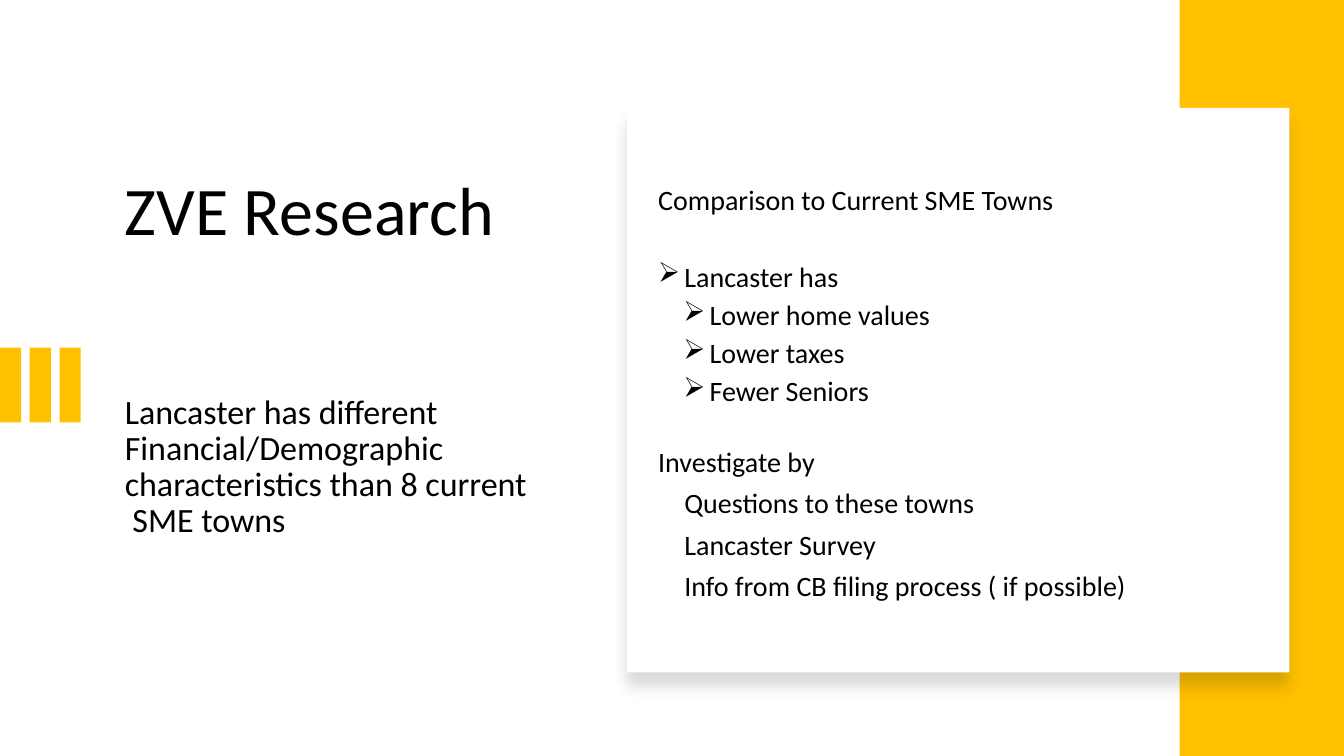
import pptx
import pptx.dml.color
import pptx.enum.text
import pptx.oxml
import pptx.oxml.ns
import pptx.util
from lxml import etree

Inches = pptx.util.Inches
Pt = pptx.util.Pt
GOLD, WHITE, BLACK = "FFC000", "FFFFFF", "000000"


def color(code):
    return pptx.dml.color.RGBColor.from_string(code)


def add(parent, tag, **attrs):
    node = etree.SubElement(parent, pptx.oxml.ns.qn(tag))
    for key, value in attrs.items():
        node.set(key, str(value))
    return node


def write(para, text, size=20, after=5.6, lines=0.9, left=0, bullet=None):
    """Fill a paragraph; left is the text indent in inches."""
    para.text = text
    para.line_spacing = lines
    para.space_after = Pt(after)
    para.font.size = Pt(size)
    para.font.name = "Calibri"
    para.font.color.rgb = color(BLACK)
    props = para._p.get_or_add_pPr()
    props.set("marL", str(Inches(left)))
    if bullet:
        props.set("indent", str(-Inches(0.26)))
        mark = pptx.oxml.parse_xml(
            f'<a:buChar {pptx.oxml.ns.nsdecls("a")} char="{bullet}"/>')
        props.find(pptx.oxml.ns.qn("a:defRPr")).addprevious(mark)


class Deck:
    def __init__(self):
        self.file = pptx.Presentation()
        self.file.slide_width = Inches(13.33)
        self.file.slide_height = Inches(7.5)
        self.slide = self.file.slides.add_slide(self.file.slide_layouts[6])

    def rect(self, x, y, w, h, fill):
        box = self.slide.shapes.add_shape(
            pptx.enum.shapes.MSO_SHAPE.RECTANGLE,
            Inches(x), Inches(y), Inches(w), Inches(h))
        box.shadow.inherit = False
        box.fill.solid()
        box.fill.fore_color.rgb = color(fill)
        box.line.fill.background()
        return box

    def card(self, x, y, w, h):
        """White panel with a soft shadow below it."""
        box = self.rect(x, y, w, h, WHITE)
        effects = box._element.spPr.find(pptx.oxml.ns.qn("a:effectLst"))
        shade = add(effects, "a:outerShdw", blurRad=Pt(11), dist=Pt(10),
                    dir=90 * 60000, algn="t", rotWithShape=0)
        tint = add(shade, "a:srgbClr", val=BLACK)
        add(tint, "a:alpha", val=15000)

    def text(self, x, y, w, h, rows):
        """Place a text box; each row is (text, format)."""
        box = self.slide.shapes.add_textbox(
            Inches(x), Inches(y), Inches(w), Inches(h))
        frame = box.text_frame
        frame.word_wrap = True
        frame.vertical_anchor = pptx.enum.text.MSO_ANCHOR.TOP
        for i, (text, style) in enumerate(rows):
            para = frame.add_paragraph() if i else frame.paragraphs[0]
            write(para, text, **style)


def main():
    deck = Deck()
    for i in range(3):
        deck.rect(i * 0.295, 3.45, 0.21, 0.74, GOLD)
    deck.rect(11.7, 0, 1.63, 7.5, GOLD)
    deck.card(6.22, 1.07, 6.57, 5.6)

    deck.text(1.14, 1.72, 4.26, 4.4, [
        ("ZVE Research", dict(size=48.6, lines=0.88, after=104)),
        ("Lancaster has different Financial/Demographic "
         "characteristics than 8 current\v SME towns",
         dict(size=24.3, lines=0.88, after=0)),
    ])

    top = dict(left=0.26, bullet="➢")
    sub = dict(left=0.51, bullet="➢")
    step = dict(left=0.26, lines=1.0)
    deck.text(6.43, 1.8, 6.06, 4.4, [
        ("Comparison to Current SME Towns", dict(after=33)),
        ("Lancaster has", top),
        ("Lower home values", sub),
        ("Lower taxes", sub),
        ("Fewer Seniors", dict(sub, after=26.3)),
        ("Investigate by", dict(lines=1.0)),
        ("Questions to these towns", step),
        ("Lancaster Survey", step),
        ("Info from CB filing process ( if possible)", step),
    ])
    deck.file.save("out.pptx")


if __name__ == "__main__":
    main()
